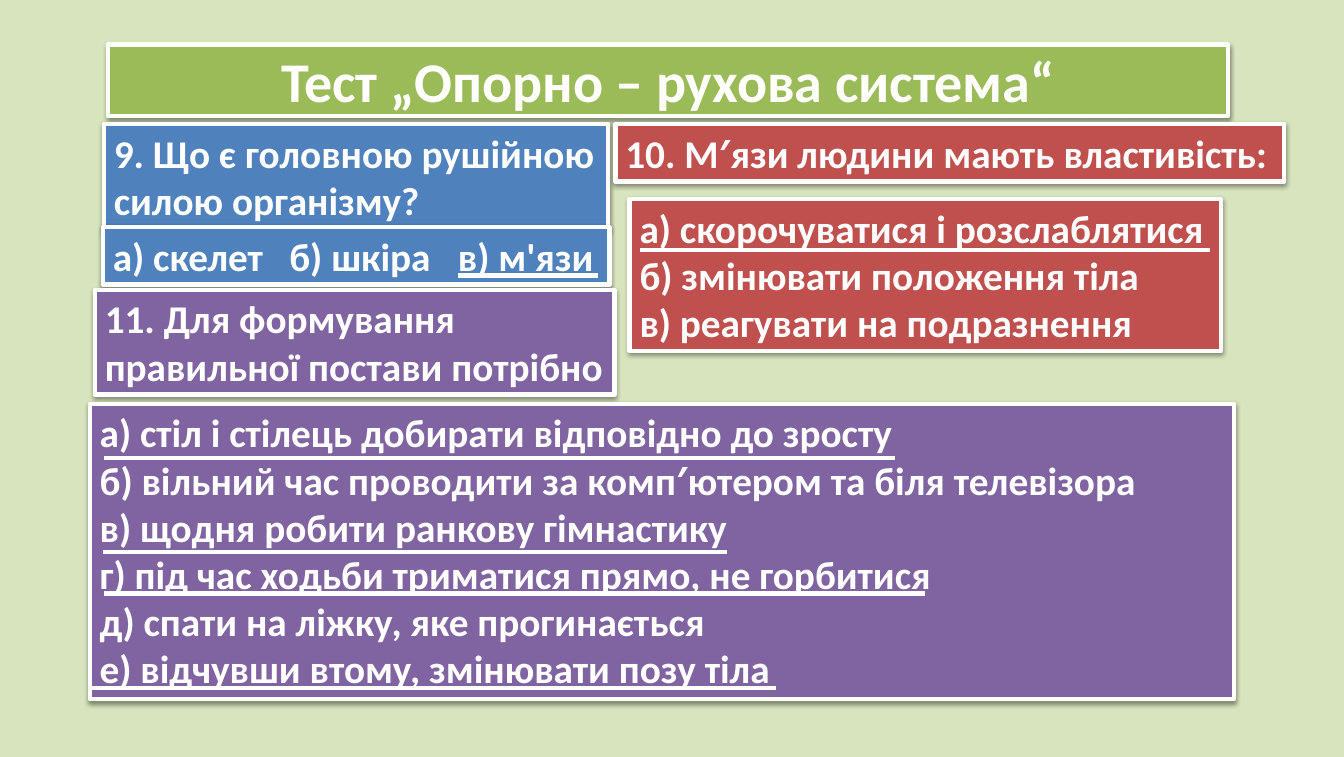
"""Build the quiz slide on the human musculoskeletal system."""
from lxml.etree import SubElement
from pptx import Presentation
from pptx.dml.color import RGBColor
from pptx.enum.shapes import MSO_CONNECTOR as LINK, MSO_SHAPE as SHAPE
from pptx.enum.text import MSO_ANCHOR as ANCHOR, PP_ALIGN as ALIGN
from pptx.oxml.ns import qn
from pptx.util import Inches, Pt

WHITE = RGBColor(0xFF, 0xFF, 0xFF)
PALE = RGBColor(0xD7, 0xE4, 0xBD)
GREEN = RGBColor(0x9B, 0xBB, 0x59)
BLUE = RGBColor(0x4F, 0x81, 0xBD)
RED = RGBColor(0xC0, 0x50, 0x4D)
PURPLE = RGBColor(0x80, 0x64, 0xA2)


def add_box(slide, area, fill, lines, size=28, wrap=True, tabs=()):
    box = slide.shapes.add_shape(SHAPE.RECTANGLE, *map(Inches, area))
    box.fill.solid()
    box.fill.fore_color.rgb = fill
    box.line.color.rgb = WHITE
    box.line.width = Pt(3)
    box.shadow.inherit = False
    effects = box._element.spPr.find(qn("a:effectLst"))
    shadow = SubElement(effects, qn("a:outerShdw"), blurRad="40000",
                        dist="20000", dir="5400000", rotWithShape="0")
    black = SubElement(shadow, qn("a:srgbClr"), val="000000")
    SubElement(black, qn("a:alpha"), val="38000")
    frame = box.text_frame
    frame.word_wrap = wrap
    frame.vertical_anchor = ANCHOR.TOP
    frame.text = "\n".join(lines)
    for para in frame.paragraphs:
        para.alignment = ALIGN.LEFT
        if tabs:
            stops = SubElement(para._p.get_or_add_pPr(), qn("a:tabLst"))
            for stop in tabs:
                SubElement(stops, qn("a:tab"), pos=str(Inches(stop)), algn="l")
        para.font.name = "Calibri"
        para.font.size = Pt(size)
        para.font.bold = True
        para.font.color.rgb = WHITE
    return frame


deck = Presentation()
deck.slide_width, deck.slide_height = Inches(13.32), Inches(7.5)
slide = deck.slides.add_slide(deck.slide_layouts[6])
slide.background.fill.solid()
slide.background.fill.fore_color.rgb = PALE

title = add_box(slide, (1.07, 0.44, 11.1, 0.71), GREEN,
                ["Тест „Опорно – рухова система“"], size=40)
title.vertical_anchor = ANCHOR.MIDDLE
title.paragraphs[0].alignment = ALIGN.CENTER

add_box(slide, (1.03, 1.23, 5, 1.04), BLUE,
        ["9. Що є головною рушійною силою організму?"])
add_box(slide, (1.02, 2.25, 5.02, 0.57), BLUE,
        ["а) скелет\tб) шкіра\tв) м'язи"], tabs=(1.75, 3.42))
add_box(slide, (6.1, 1.23, 6.63, 0.57), RED,
        ["10. М′язи людини мають властивість:"])
add_box(slide, (6.24, 1.97, 5.86, 1.51), RED, [
    "а) скорочуватися і розслаблятися",
    "б) змінювати положення тіла",
    "в) реагувати на подразнення",
], wrap=False)
add_box(slide, (0.94, 2.87, 5.15, 1.04), PURPLE,
        ["11. Для формування правильної постави потрібно"])
add_box(slide, (0.89, 4, 11.34, 2.93), PURPLE, [
    "а) стіл і стілець добирати відповідно до зросту",
    "б) вільний час проводити за комп′ютером та біля телевізора",
    "в) щодня робити ранкову гімнастику",
    "г) під час ходьби триматися прямо, не горбитися",
    "д) спати на ліжку, яке прогинається",
    "е) відчувши втому, змінювати позу тіла",
])

MARKS = [
    (4.54, 5.93, 2.73),
    (6.34, 11.99, 2.48),
    (1.03, 8.87, 4.54),
    (1.02, 7.21, 5.47),
    (1.03, 9.17, 5.88),
    (0.89, 7.69, 6.82),
]
for left, right, y in MARKS:
    mark = slide.shapes.add_connector(
        LINK.STRAIGHT, Inches(left), Inches(y), Inches(right), Inches(y))
    mark.line.color.rgb = WHITE
    mark.line.width = Pt(3)
    SubElement(mark._element.spPr, qn("a:effectLst"))

deck.save("out.pptx")
